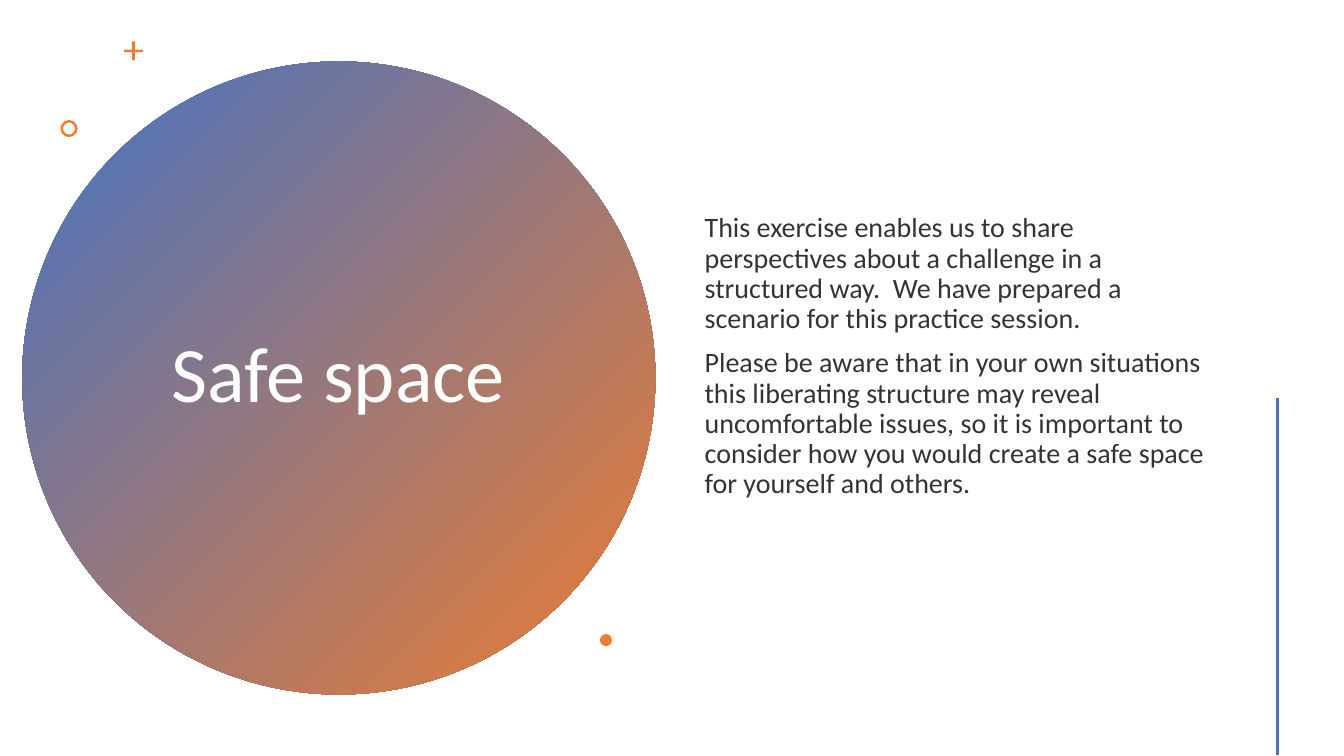
from lxml import etree
from pptx import Presentation, util as u
from pptx.dml.color import RGBColor
from pptx.enum import shapes, text
from pptx.oxml import ns

BLUE = RGBColor(0x44, 0x72, 0xC4)
ORANGE = RGBColor(0xED, 0x7D, 0x31)
WHITE = RGBColor(0xFF, 0xFF, 0xFF)
BLACK = RGBColor(0x00, 0x00, 0x00)

SHAPE = shapes.MSO_SHAPE
ALIGN = text.PP_ALIGN


def inches(*lengths):
    return [u.Inches(length) for length in lengths]


class SlideBuilder:
    font = "Calibri"

    def __init__(self, slide):
        self.slide = slide

    def shape(self, kind, place, colors, adjustment=None):
        """Add a borderless shape; two colours give a diagonal gradient."""
        shape = self.slide.shapes.add_shape(kind, *inches(*place))
        shape.shadow.inherit = False
        shape.line.fill.background()
        if len(colors) == 1:
            shape.fill.solid()
            shape.fill.fore_color.rgb = colors[0]
        else:
            shape.fill.gradient()
            shape.fill.gradient_angle = 315
            for stop, color in zip(shape.fill.gradient_stops, colors):
                stop.color.rgb = color
        if adjustment is not None:
            shape.adjustments[0] = adjustment

    def text(self, place, paragraphs, size, color, para_format,
             opacity=100, bottom=0.05):
        """Add a wrapped, vertically centred text box."""
        box = self.slide.shapes.add_textbox(*inches(*place))
        frame = box.text_frame
        frame_format = {
            "word_wrap": True,
            "vertical_anchor": text.MSO_ANCHOR.MIDDLE,
            "margin_bottom": u.Inches(bottom),
        }
        for name, value in frame_format.items():
            setattr(frame, name, value)
        for index, words in enumerate(paragraphs):
            para = frame.add_paragraph() if index else frame.paragraphs[0]
            for name, value in para_format.items():
                setattr(para, name, value)
            span = para.add_run()
            span.text = words
            for name, value in {"name": self.font, "size": u.Pt(size)}.items():
                setattr(span.font, name, value)
            span.font.color.rgb = color
            if opacity < 100:
                tint = span._r.find(".//" + ns.qn("a:srgbClr"))
                etree.SubElement(tint, ns.qn("a:alpha"), val=str(opacity * 1000))

    def line(self, start, end, color, width):
        """Add a straight line without a shadow."""
        line = self.slide.shapes.add_connector(
            shapes.MSO_CONNECTOR.STRAIGHT, *inches(*start, *end))
        line.line.color.rgb = color
        line.line.width = u.Pt(width)
        etree.SubElement(line._element.spPr, ns.qn("a:effectLst"))


def main():
    deck = Presentation()
    deck.slide_width, deck.slide_height = inches(13.33, 7.5)
    page = SlideBuilder(deck.slides.add_slide(deck.slide_layouts[6]))

    # Title on the gradient circle
    page.shape(SHAPE.OVAL, (0.22, 0.61, 6.28, 6.28), (BLUE, ORANGE))
    page.text((1.36, 1.41, 3.99, 4.67), ["Safe space"], 56, WHITE,
              {"alignment": ALIGN.CENTER, "line_spacing": 0.9})

    # Small ornaments: plus, ring and dot
    page.shape(SHAPE.CROSS, (1.23, 0.41, 0.19, 0.19), (ORANGE,), 0.43)
    page.shape(SHAPE.DONUT, (0.6, 1.19, 0.17, 0.17), (ORANGE,), 0.15)
    page.shape(SHAPE.OVAL, (5.95, 6.29, 0.12, 0.12), (ORANGE,))

    # Body text, raised a little by the bottom margin
    page.text(
        (6.89, 0.57, 5.22, 6.38),
        ["This exercise enables us to share perspectives about a challenge in "
         "a structured way.  We have prepared a scenario for this practice "
         "session.",
         "Please be aware that in your own situations this liberating "
         "structure may reveal uncomfortable issues, so it is important to "
         "consider how you would create a safe space for yourself and "
         "others."],
        20, BLACK,
        {"alignment": ALIGN.LEFT, "line_spacing": 0.9,
         "space_before": u.Pt(10)},
        opacity=80, bottom=0.49)

    # Vertical accent line
    page.line((12.67, 3.95), (12.67, 7.49), BLUE, 2)

    deck.save("out.pptx")


if __name__ == "__main__":
    main()
